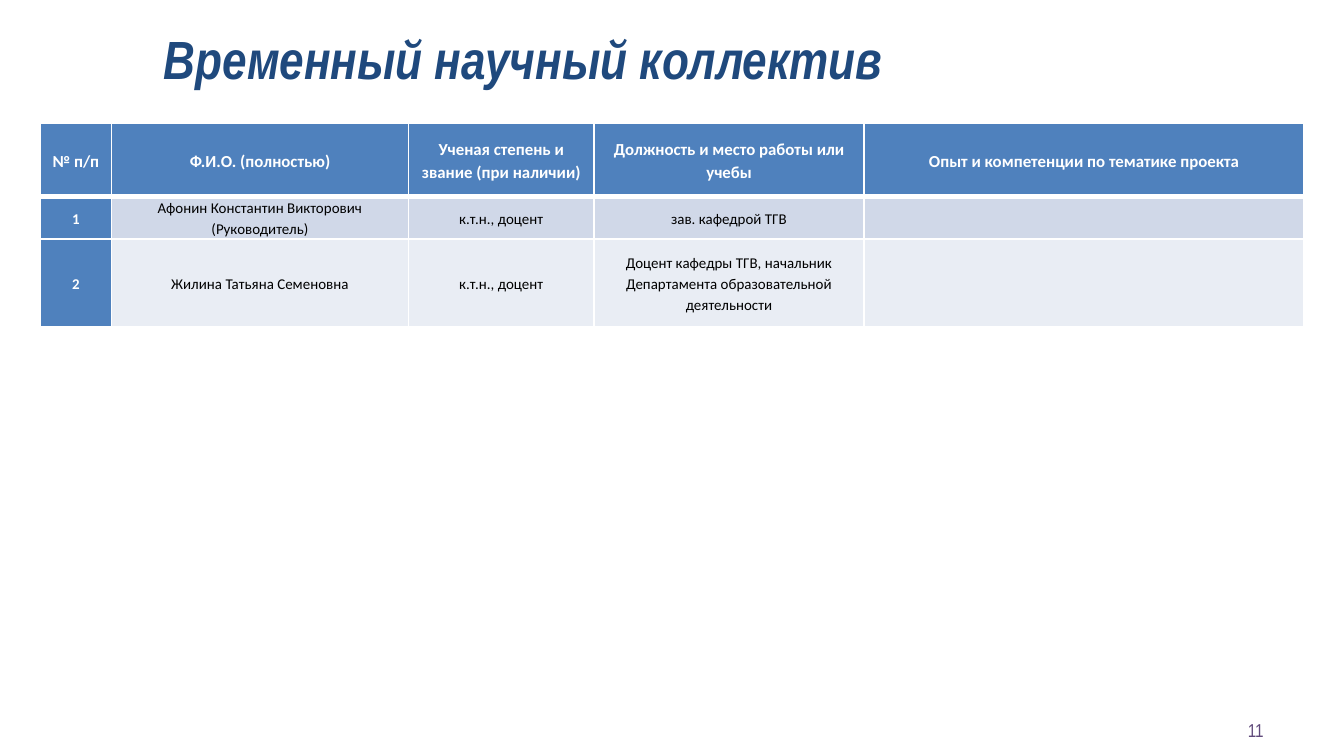
from pptx import Presentation
from pptx.dml.color import RGBColor
from pptx.enum.text import MSO_ANCHOR as ANCHOR, PP_ALIGN as ALIGN
from pptx.oxml import parse_xml
from pptx.oxml.ns import nsdecls
from pptx.util import Inches, Pt

WHITE, BLUE = "FFFFFF", "4F81BD"
ROW_FILLS = [BLUE, "D0D8E8", "E9EDF4"]
COL_WIDTHS = [0.53, 2.21, 1.38, 2.01, 3.27]
ROW_HEIGHTS = [0.54, 0.32, 0.65]
ROWS = [
    ["№ п/п", "Ф.И.О. (полностью)", "Ученая степень и звание (при наличии)",
     "Должность и место работы или учебы", "Опыт и компетенции по тематике проекта"],
    ["1", "Афонин Константин Викторович (Руководитель)", "к.т.н., доцент",
     "зав. кафедрой ТГВ", ""],
    ["2", "Жилина Татьяна Семеновна", "к.т.н., доцент",
     "Доцент кафедры ТГВ, начальник Департамента образовательной деятельности", ""],
]


def style_text(tf, align, size, font, color, bold=False, italic=False):
    tf.word_wrap = True
    tf.vertical_anchor = ANCHOR.MIDDLE
    p = tf.paragraphs[0]
    p.alignment = align
    for r in p.runs:
        r.font.size, r.font.name = Pt(size), font
        r.font.bold, r.font.italic = bold, italic
        r.font.color.rgb = RGBColor.from_string(color)


def set_borders(cell, bottom):
    """Draw white cell borders, 1 pt wide except for the bottom one."""
    tcPr = cell._tc.get_or_add_tcPr()
    for side, width in (("L", 1), ("R", 1), ("T", 1), ("B", bottom)):
        tcPr.append(parse_xml(
            f'<a:ln{side} {nsdecls("a")} w="{Pt(width)}"><a:solidFill>'
            f'<a:srgbClr val="{WHITE}"/></a:solidFill></a:ln{side}>'))


prs = Presentation()
prs.slide_width = Inches(10)
prs.slide_height = prs.slide_width * 9 // 16
s = prs.slides.add_slide(prs.slide_layouts[6])

number = s.shapes.add_textbox(Inches(7.17), Inches(5.28), Inches(2.33), Inches(0.3))
number.text_frame.text = "11"
style_text(number.text_frame, ALIGN.RIGHT, 10, "Arial Narrow", "604A7B")

title = s.shapes.add_textbox(Inches(1.06), Inches(0.21), Inches(5.67), Inches(0.45))
title.text_frame.text = "Временный научный коллектив"
style_text(title.text_frame, ALIGN.CENTER, 28.8, "Arial Narrow", "1F497D", True, True)

table = s.shapes.add_table(
    len(ROWS), len(COL_WIDTHS), Inches(0.3), Inches(0.92),
    Inches(sum(COL_WIDTHS)), Inches(sum(ROW_HEIGHTS))).table
for column, width in zip(table.columns, COL_WIDTHS):
    column.width = Inches(width)
for row, height in zip(table.rows, ROW_HEIGHTS):
    row.height = Inches(height)

for i, texts in enumerate(ROWS):
    for j, text in enumerate(texts):
        cell = table.cell(i, j)
        is_heading = i == 0 or j == 0
        cell.margin_left = cell.margin_right = Inches(0.06)
        cell.margin_top = cell.margin_bottom = 0
        cell.vertical_anchor = ANCHOR.MIDDLE
        set_borders(cell, bottom=3 if i == 0 else 1)
        cell.fill.solid()
        cell.fill.fore_color.rgb = RGBColor.from_string(BLUE if j == 0 else ROW_FILLS[i])
        if text:
            cell.text_frame.text = text
            cell.text_frame.paragraphs[0].line_spacing = 1.15
            style_text(cell.text_frame, ALIGN.CENTER, 9 if i == 0 else 8, "Calibri",
                       WHITE if is_heading else "000000", bold=is_heading)

prs.save("out.pptx")
